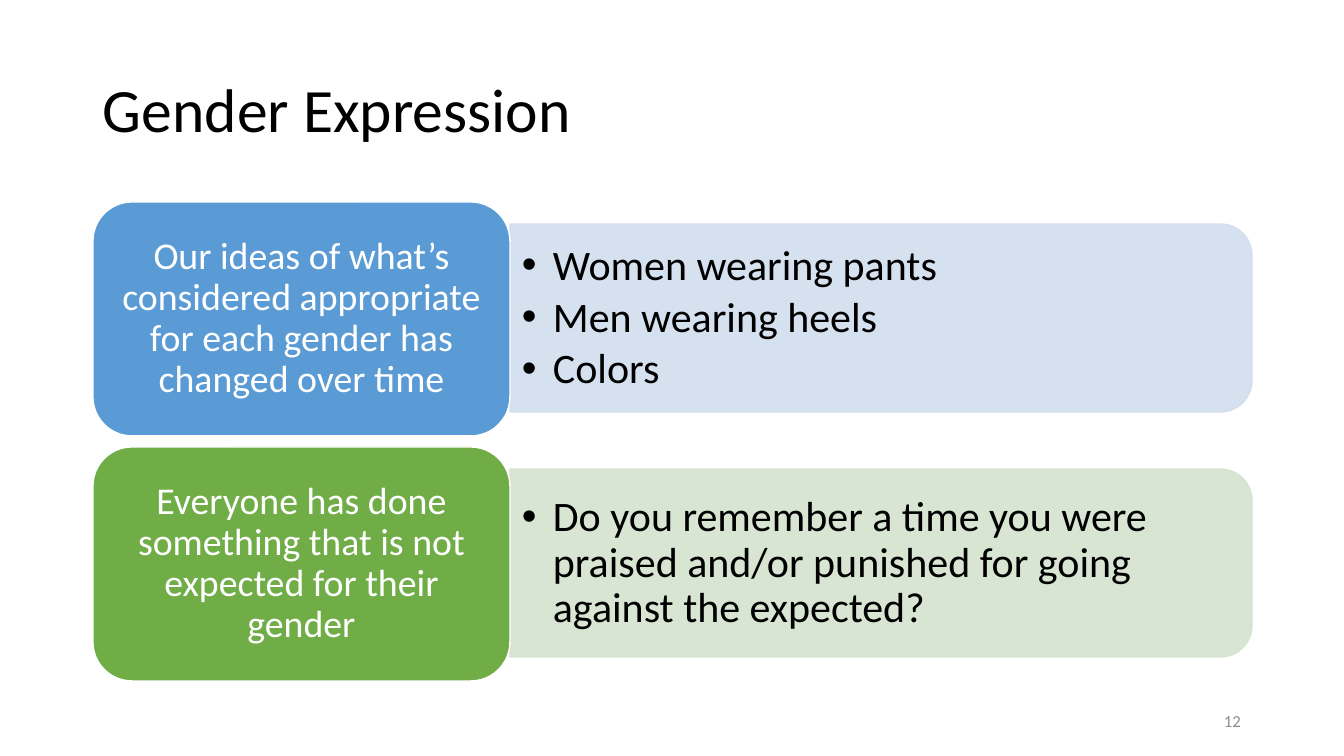
from lxml import etree
from pptx import Presentation
from pptx.dml.color import RGBColor
from pptx.enum.shapes import MSO_SHAPE
from pptx.enum.text import MSO_ANCHOR, MSO_AUTO_SIZE, PP_ALIGN
from pptx.oxml.ns import qn
from pptx.util import Pt

LEFT, MID, RIGHT = PP_ALIGN.LEFT, PP_ALIGN.CENTER, PP_ALIGN.RIGHT
CARD, PANEL = MSO_SHAPE.ROUNDED_RECTANGLE, MSO_SHAPE.ROUND_2_SAME_RECTANGLE
CENTRE, FIXED = MSO_ANCHOR.MIDDLE, MSO_AUTO_SIZE.NONE
SCALE = 914400 / 100.8  # EMU in one px
TITLE_ONLY = 5

ROWS = [
    ("Our ideas of what’s considered appropriate for each gender has changed over time",
     "5B9BD5", "D2DEEF",
     ["Women wearing pants", "Men wearing heels", "Colors"]),
    ("Everyone has done something that is not expected for their gender",
     "70AD47", "D5E3CF",
     ["Do you remember a time you were praised and/or punished for going "
      "against the expected?"]),
]


def px(n):
    return round(n * SCALE)


def color(code):
    return RGBColor.from_string(code)


def assign(item, values):
    for key, value in values.items():
        setattr(item, key, value)


class Deck:
    font = "Calibri"
    ink = "000000"
    paper = "FFFFFF"
    muted = "8C8C8C"

    def __init__(self, wide, high):
        self.file = Presentation()
        assign(self.file, {"slide_width": px(wide), "slide_height": px(high)})
        self.slide = self.file.slides.add_slide(self.file.slide_layouts[TITLE_ONLY])

    def fill_text(self, shape, lines, size, ink, align=LEFT, inset=(10, 5),
                  lead=0.9, after=0, bullet=False):
        frame = shape.text_frame
        side, edge = map(px, inset)
        assign(frame, {"word_wrap": True, "auto_size": FIXED,
                       "vertical_anchor": CENTRE,
                       "margin_left": side, "margin_right": side,
                       "margin_top": edge, "margin_bottom": edge})
        frame.text = "\n".join(lines)
        for para in frame.paragraphs:
            assign(para, {"alignment": align, "line_spacing": lead,
                          "space_after": Pt(after)})
            face = para.runs[0].font
            assign(face, {"name": self.font, "size": Pt(size)})
            face.color.rgb = color(ink)
            if bullet:
                self.mark(para)

    def mark(self, para):
        props = para._p.get_or_add_pPr()
        props.set("marL", str(px(31)))
        props.set("indent", str(px(-31)))
        etree.SubElement(props, qn("a:buFont")).set("typeface", "Arial")
        etree.SubElement(props, qn("a:buChar")).set("char", "•")

    def title(self, text, box):
        shape = self.slide.shapes.title
        assign(shape, dict(zip(("left", "top", "width", "height"), map(px, box))))
        self.fill_text(shape, [text], 44, self.ink)

    def text(self, lines, box, size, ink, **style):
        shape = self.slide.shapes.add_textbox(*map(px, box))
        self.fill_text(shape, lines, size, ink, **style)

    def block(self, kind, box, fill, line):
        shape = self.slide.shapes.add_shape(kind, *map(px, box))
        shape.shadow.inherit = False
        shape.fill.solid()
        shape.fill.fore_color.rgb = color(fill)
        shape.line.color.rgb = color(line)
        shape.line.width = Pt(1)
        return shape

    def card(self, text, box, fill):
        shape = self.block(CARD, box, fill, self.paper)
        self.fill_text(shape, [text], 27, self.paper, align=MID, inset=(11, 6))

    def panel(self, box, fill):
        # A quarter turn about the centre puts the round corners on the right
        left, top, wide, high = box
        shift = (wide - high) / 2
        shape = self.block(PANEL, (left + shift, top - shift, high, wide), fill, fill)
        shape.rotation = 90
        for tint in shape._element.spPr.iter(qn("a:srgbClr")):
            etree.SubElement(tint, qn("a:alpha")).set("val", "90000")


def main():
    deck = Deck(1344, 756)
    deck.title("Gender Expression", (93, 40, 1159, 146))

    # Rows: a pale panel with bullets, then the card beside it
    for i, (head, dark, pale, points) in enumerate(ROWS):
        top = 202 + 245 * i
        deck.panel((510, top + 22, 742, 188), pale)
        deck.text(points, (510, top + 32, 733, 169), 30, deck.ink,
                  inset=(12, 6), after=4.5, bullet=True)
        deck.card(head, (93, top, 417, 234), dark)

    # Page number
    deck.text(["12"], (949, 701, 302, 40), 12, deck.muted, align=RIGHT, lead=1.0)
    deck.file.save("out.pptx")


if __name__ == "__main__":
    main()
